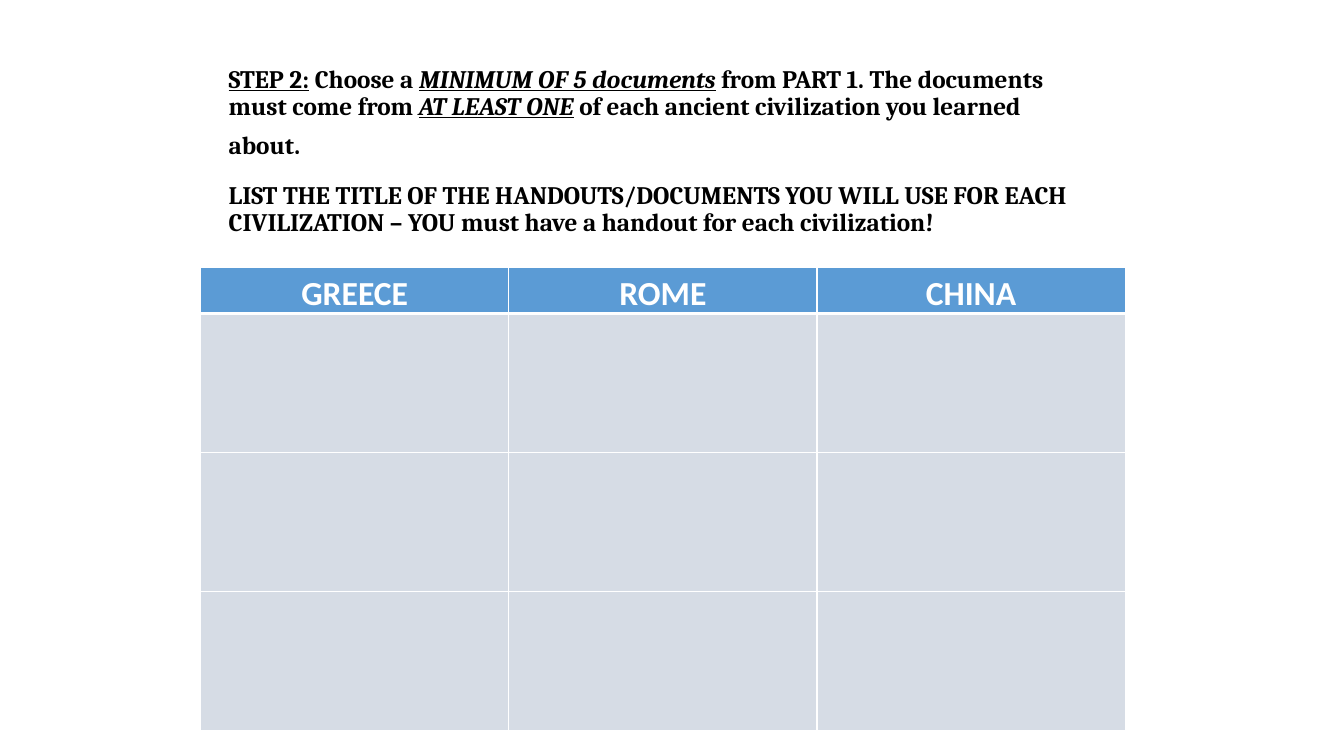
"""Build the slide for choosing handouts on three ancient civilizations."""
from lxml.etree import SubElement
from pptx import Presentation
from pptx.dml.color import RGBColor
from pptx.enum.text import MSO_ANCHOR, PP_ALIGN
from pptx.oxml.ns import qn
from pptx.util import Inches, Pt

BLACK = RGBColor(0x00, 0x00, 0x00)
WHITE = RGBColor(0xFF, 0xFF, 0xFF)
HEADER_BLUE = RGBColor(0x5B, 0x9B, 0xD5)
ROW_GREY = RGBColor(0xD6, 0xDC, 0xE5)

PLAIN = {"name": "Cambria", "size": Pt(18), "bold": True}
LABEL = {**PLAIN, "underline": True}
STRESSED = {**LABEL, "italic": True}
LARGE = {**PLAIN, "size": Pt(28)}
HEADING = {"name": "Calibri", "size": Pt(24), "bold": True}

INSTRUCTIONS = [
    [
        ("STEP 2:", LABEL),
        (" Choose a ", PLAIN),
        ("MINIMUM OF 5 documents", STRESSED),
        (" from PART 1. The documents must come from ", PLAIN),
        ("AT LEAST ONE", STRESSED),
        (" of each ancient civilization you learned about.", PLAIN),
        (" ", LARGE),
    ],
    [
        ("LIST THE TITLE OF THE HANDOUTS/DOCUMENTS YOU WILL USE FOR EACH "
         "CIVILIZATION – YOU must have a handout for each civilization!", PLAIN),
    ],
]
CIVILIZATIONS = ["GREECE", "ROME", "CHINA"]
HANDOUT_ROWS = 3


def add_run(paragraph, text, style, color):
    """Add a run with the given font style and color."""
    run = paragraph.add_run()
    run.text = text
    for attribute, value in style.items():
        setattr(run.font, attribute, value)
    run.font.color.rgb = color


def add_instructions(slide):
    """Add the task text above the table."""
    box = slide.shapes.add_textbox(Inches(2.17), Inches(0.36), Inches(8.58), Inches(2.29))
    frame = box.text_frame
    frame.word_wrap = True
    frame.vertical_anchor = MSO_ANCHOR.MIDDLE
    for index, pieces in enumerate(INSTRUCTIONS):
        paragraph = frame.add_paragraph() if index else frame.paragraphs[0]
        paragraph.line_spacing = 0.9
        paragraph.space_before = Pt(14 * index)
        for text, style in pieces:
            add_run(paragraph, text, style, BLACK)


def set_borders(cell, top, bottom):
    """Draw white cell borders with the given top and bottom widths in points."""
    properties = cell._tc.get_or_add_tcPr()
    for side, width in {"L": 1, "R": 1, "T": top, "B": bottom}.items():
        line = SubElement(properties, qn(f"a:ln{side}"), w=str(Pt(width)))
        fill = SubElement(line, qn("a:solidFill"))
        SubElement(fill, qn("a:srgbClr"), val=str(WHITE))


def style_cell(cell, color, top=1, bottom=1):
    """Set the borders, margins and fill of a cell."""
    set_borders(cell, top, bottom)
    margins = {
        "margin_left": Inches(0.07),
        "margin_right": Inches(0.07),
        "margin_top": 0,
        "margin_bottom": 0,
    }
    for attribute, value in margins.items():
        setattr(cell, attribute, value)
    cell.fill.solid()
    cell.fill.fore_color.rgb = color


def add_handout_table(slide):
    """Add the table with one column for each civilization."""
    table = slide.shapes.add_table(
        HANDOUT_ROWS + 1, len(CIVILIZATIONS),
        Inches(1.99), Inches(2.65), Inches(9.17), Inches(4.6),
    ).table
    for index, row in enumerate(table.rows):
        row.height = Inches(1.38 if index else 0.46)
    for column, civilization in enumerate(CIVILIZATIONS):
        header = table.cell(0, column)
        style_cell(header, HEADER_BLUE, bottom=3)
        paragraph = header.text_frame.paragraphs[0]
        paragraph.alignment = PP_ALIGN.CENTER
        paragraph.line_spacing = 1.15
        add_run(paragraph, civilization, HEADING, WHITE)
        for row in range(1, HANDOUT_ROWS + 1):
            style_cell(table.cell(row, column), ROW_GREY, top=3 if row == 1 else 1)


def main():
    """Build and save the slide."""
    presentation = Presentation()
    presentation.slide_width = Inches(13.33)
    presentation.slide_height = Inches(7.5)
    slide = presentation.slides.add_slide(presentation.slide_layouts[6])
    add_instructions(slide)
    add_handout_table(slide)
    presentation.save("out.pptx")


if __name__ == "__main__":
    main()
